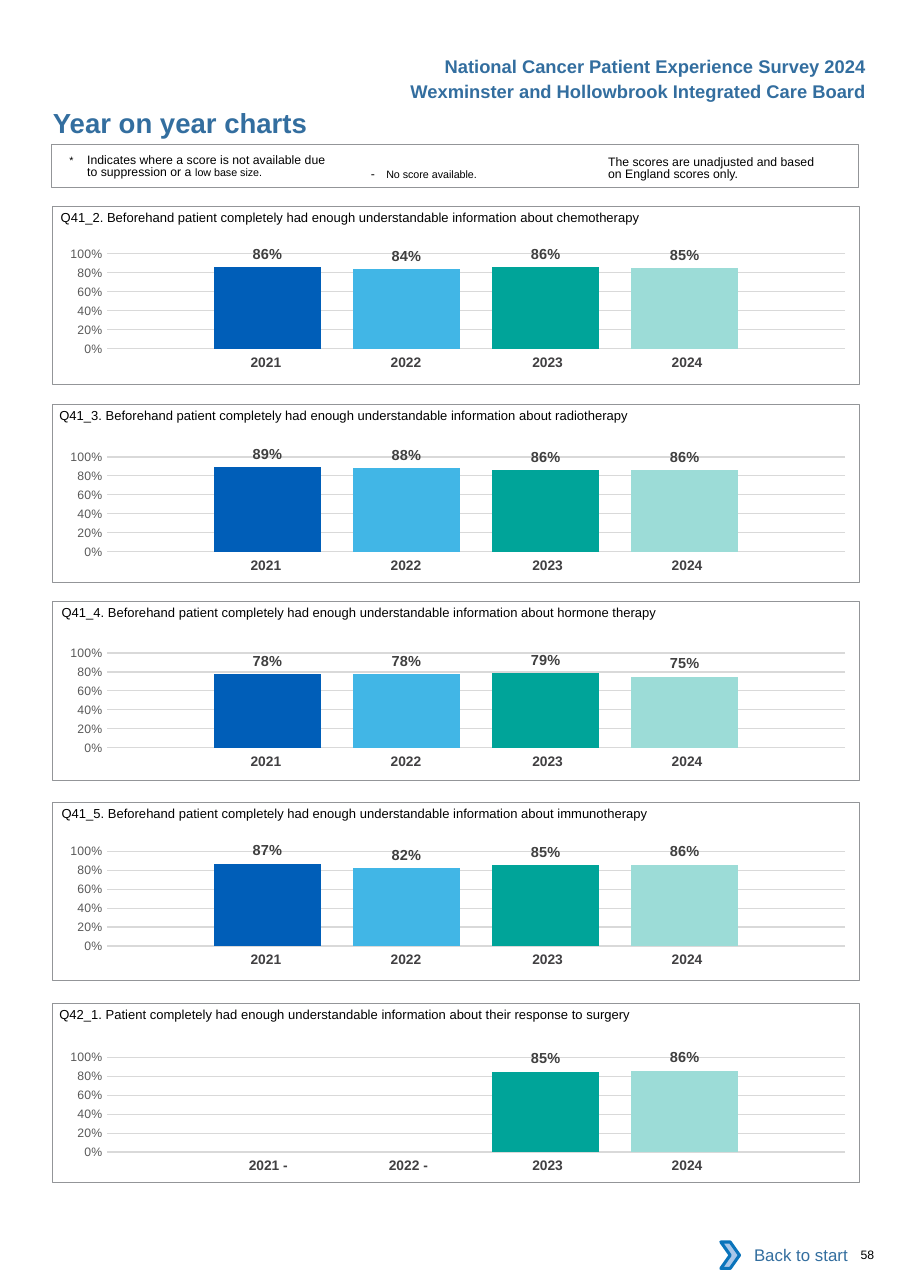
from lxml.etree import SubElement, fromstring
from pptx import Presentation
from pptx.chart.data import CategoryChartData
from pptx.dml.color import RGBColor
from pptx.enum.chart import XL_CHART_TYPE, XL_LABEL_POSITION, XL_TICK_MARK
from pptx.enum.shapes import MSO_SHAPE
from pptx.enum.text import MSO_ANCHOR, PP_ALIGN
from pptx.oxml.ns import qn
from pptx.util import Cm, Pt

YEARS = ["2021", "2022", "2023", "2024"]
YEAR_COLOURS = ["005EB8", "41B6E6", "00A499", "9CDCD7"]
YEAR_WIDTHS = [3.23, 3.23, 3.4, 3.23]
HEADING_BLUE = "336E9F"
FRAME_GREY = "939598"
PANEL_LEFT, PANEL_WIDTH, PANEL_HEIGHT = 1.21, 18.6, 4.11
NO_GRID_STYLE = "{2D5ABB26-0587-4C30-8999-92F81FD0307C}"
CHART_NS = "http://schemas.openxmlformats.org/drawingml/2006/chart"
DRAWING_NS = "http://schemas.openxmlformats.org/drawingml/2006/main"

# Panel top, chart top, question left (cm), question, scores by year
PANELS = [
    (4.75, 5.38, 1.40, "Q41_2. Beforehand patient completely had enough understandable "
     "information about chemotherapy", (0.86, 0.84, 0.86, 0.85)),
    (9.32, 10.06, 1.37, "Q41_3. Beforehand patient completely had enough understandable "
     "information about radiotherapy", (0.89, 0.88, 0.86, 0.86)),
    (13.87, 14.58, 1.42, "Q41_4. Beforehand patient completely had enough understandable "
     "information about hormone therapy", (0.78, 0.78, 0.79, 0.75)),
    (18.49, 19.15, 1.42, "Q41_5. Beforehand patient completely had enough understandable "
     "information about immunotherapy", (0.87, 0.82, 0.85, 0.86)),
    (23.14, 23.90, 1.37, "Q42_1. Patient completely had enough understandable information "
     "about their response to surgery", (None, None, 0.85, 0.86)),
]


def colour(hex_code):
    return RGBColor.from_string(hex_code)


def style_font(font, size, hex_code, bold=False):
    font.name = "Arial"
    font.size = Pt(size)
    font.bold = bold
    font.color.rgb = colour(hex_code)


def set_margins(holder, left=0, top=0, right=0, bottom=0):
    holder.margin_left, holder.margin_top = Cm(left), Cm(top)
    holder.margin_right, holder.margin_bottom = Cm(right), Cm(bottom)


def add_text(shapes, box, runs, hex_code="000000", bold=False, align=PP_ALIGN.LEFT):
    """Add a one-paragraph text box; runs are (text, size) pairs."""
    text_box = shapes.add_textbox(*[Cm(length) for length in box])
    frame = text_box.text_frame
    frame.word_wrap = True
    set_margins(frame)
    paragraph = frame.paragraphs[0]
    paragraph.alignment = align
    for text, size in runs:
        run = paragraph.add_run()
        run.text = text
        style_font(run.font, size, hex_code, bold)
    return paragraph


def add_frame(shapes, left, top, width, height, line_width):
    frame = shapes.add_shape(MSO_SHAPE.RECTANGLE, Cm(left), Cm(top), Cm(width), Cm(height))
    frame.shadow.inherit = False
    frame.fill.background()
    frame.line.color.rgb = colour(FRAME_GREY)
    frame.line.width = Pt(line_width)


def add_header(slide):
    # Survey and board names
    for top, heading in ((1.27, "National Cancer Patient Experience Survey 2024"),
                         (1.86, "Wexminster and Hollowbrook Integrated Care Board")):
        add_text(slide.shapes, (7, top, 12.97, 0.5), [(heading, 12)],
                 HEADING_BLUE, True, PP_ALIGN.RIGHT)
    # Page title
    title = slide.shapes.title
    title.left, title.top, title.width, title.height = Cm(1.22), Cm(2.44), Cm(11.43), Cm(0.76)
    title.text_frame.text = "Year on year charts"
    title.text_frame.vertical_anchor = MSO_ANCHOR.TOP
    set_margins(title.text_frame)
    heading = title.text_frame.paragraphs[0]
    heading.alignment = PP_ALIGN.LEFT
    style_font(heading.runs[0].font, 18, HEADING_BLUE, True)


def add_key(slide, left, top):
    key = slide.shapes.add_group_shape().shapes
    add_frame(key, left, top, PANEL_WIDTH, 1, 0.75)
    # Unadjusted scores
    unadjusted = add_text(key, (left + 12.83, top + 0.28, 4.95, 0.65),
                          [("The scores are unadjusted and based on England scores only.", 8)])
    unadjusted.line_spacing = Pt(8.1)
    # Missing scores
    missing = add_text(key, (left + 7.36, top + 0.5, 4.4, 0.35),
                       [("- ", 8), ("No score available.", 7)])
    missing.runs[0]._r.get_or_add_rPr().set("spc", "260")
    # Suppressed scores
    suppressed = add_text(key, (left + 0.41, top + 0.23, 6.05, 0.65),
                          [("*\t", 7),
                           ("Indicates where a score is not available due to suppression or a ", 8),
                           ("low base size.", 7)])
    suppressed.line_spacing = Pt(8.1)
    hanging = suppressed._p.get_or_add_pPr()
    hanging.set("marL", str(Cm(0.41)))
    hanging.set("indent", str(-Cm(0.41)))


def add_score_chart(slide, left, top, scores):
    data = CategoryChartData(number_format="0%")
    data.categories = ["1"]
    for number, score in enumerate(scores, 1):
        data.add_series(f"Series {number}", [score])
    chart = slide.shapes.add_chart(XL_CHART_TYPE.COLUMN_CLUSTERED, Cm(left), Cm(top),
                                   Cm(PANEL_WIDTH), Cm(3.28), data).chart
    chart.has_legend = False
    chart.has_title = False
    chart.font.name = "Calibri"
    chart.font.size = Pt(10)
    chart.font.color.rgb = colour("000000")
    # Axes
    chart.category_axis.visible = False
    percent = chart.value_axis
    percent.minimum_scale, percent.maximum_scale, percent.major_unit = 0, 1, 0.2
    percent.major_tick_mark = percent.minor_tick_mark = XL_TICK_MARK.NONE
    percent.format.line.fill.background()
    percent.major_gridlines.format.line.color.rgb = colour("D9D9D9")
    percent.major_gridlines.format.line.width = Pt(0.75)
    percent.tick_labels.number_format = "0%"
    percent.tick_labels.number_format_is_linked = False
    style_font(percent.tick_labels.font, 8, "595959")
    # One column per year
    plot = chart.plots[0]
    plot.vary_by_categories = False
    plot.gap_width, plot.overlap = 200, -30
    for series, hex_code in zip(plot.series, YEAR_COLOURS):
        series.format.fill.solid()
        series.format.fill.fore_color.rgb = colour(hex_code)
        labels = series.data_labels
        labels.show_value = True
        labels.position = XL_LABEL_POSITION.OUTSIDE_END
        labels.number_format = "0%"
        labels.number_format_is_linked = False
        style_font(labels.font, 9.5, "404040", True)
    # Fixed plot area on a clear background
    plot_area = chart._chartSpace.chart.plotArea
    for layout in plot_area.findall(qn("c:layout")):
        plot_area.remove(layout)
    layout = fromstring(f'<c:layout xmlns:c="{CHART_NS}"><c:manualLayout/></c:layout>')
    for tag, value in (("layoutTarget", "inner"), ("xMode", "edge"), ("yMode", "edge"),
                       ("x", "0.079"), ("y", "0.145"), ("w", "0.915"), ("h", "0.666")):
        SubElement(layout[0], qn(f"c:{tag}")).set("val", value)
    plot_area.insert(0, layout)
    chart._chartSpace.chart.addnext(fromstring(
        f'<c:spPr xmlns:c="{CHART_NS}" xmlns:a="{DRAWING_NS}">'
        '<a:noFill/><a:ln><a:noFill/></a:ln></c:spPr>'))


def add_year_labels(slide, left, top, scores):
    table = slide.shapes.add_table(1, len(YEARS), Cm(left), Cm(top),
                                   Cm(sum(YEAR_WIDTHS)), Cm(0.69)).table
    table.first_row = table.horz_banding = False
    table._tbl.tblPr.find(qn("a:tableStyleId")).text = NO_GRID_STYLE
    right_margins = (0, 0, 0.1, 0.3)
    for column, (year, score) in enumerate(zip(YEARS, scores)):
        table.columns[column].width = Cm(YEAR_WIDTHS[column])
        cell = table.cell(0, column)
        cell.fill.background()
        set_margins(cell, 0.36 if score is None else 0.25, 0.13, right_margins[column], 0.13)
        cell.text_frame.text = f"{year} -" if score is None else year
        label = cell.text_frame.paragraphs[0]
        label.alignment = PP_ALIGN.CENTER
        style_font(label.runs[0].font, 9, "414042", True)


def add_panel(slide, top, chart_top, question_left, question, scores):
    add_score_chart(slide, PANEL_LEFT - 0.21, chart_top, scores)
    add_year_labels(slide, PANEL_LEFT + 3.18, chart_top + 2.67, scores)
    add_text(slide.shapes, (question_left, top + 0.07, 18, 0.38), [(question, 8.5)])
    add_frame(slide.shapes, PANEL_LEFT, top, PANEL_WIDTH, PANEL_HEIGHT, 0.5)


def add_footer(slide, left, top):
    # Back button
    button = slide.shapes.add_group_shape().shapes
    back = button.add_shape(MSO_SHAPE.RECTANGLE, Cm(left + 0.18), Cm(top), Cm(3), Cm(1.07))
    back.fill.solid()
    back.fill.fore_color.rgb = colour("FFFFFF")
    back.line.fill.background()
    back.text_frame.text = "Back to start"
    back.text_frame.vertical_anchor = MSO_ANCHOR.MIDDLE
    wording = back.text_frame.paragraphs[0]
    wording.alignment = PP_ALIGN.RIGHT
    style_font(wording.runs[0].font, 11, HEADING_BLUE)
    arrow = button.add_shape(MSO_SHAPE.CHEVRON, Cm(left), Cm(top + 0.23), Cm(0.43), Cm(0.61))
    arrow.fill.solid()
    arrow.fill.fore_color.rgb = colour("A8C7E9")
    arrow.line.color.rgb = colour("0A74BB")
    arrow.line.width = Pt(2)
    back.shadow.inherit = arrow.shadow.inherit = False
    # Page number
    add_text(slide.shapes, (left + 3.22, top + 0.36, 1, 0.33), [("58", 8)])


def main():
    deck = Presentation()
    deck.slide_width, deck.slide_height = Cm(20.98), Cm(29.69)
    slide = deck.slides.add_slide(deck.slide_layouts[5])
    add_header(slide)
    add_key(slide, 1.19, 3.33)
    for panel in PANELS:
        add_panel(slide, *panel)
    add_footer(slide, 16.62, 28.4)
    deck.save("out.pptx")


if __name__ == "__main__":
    main()
